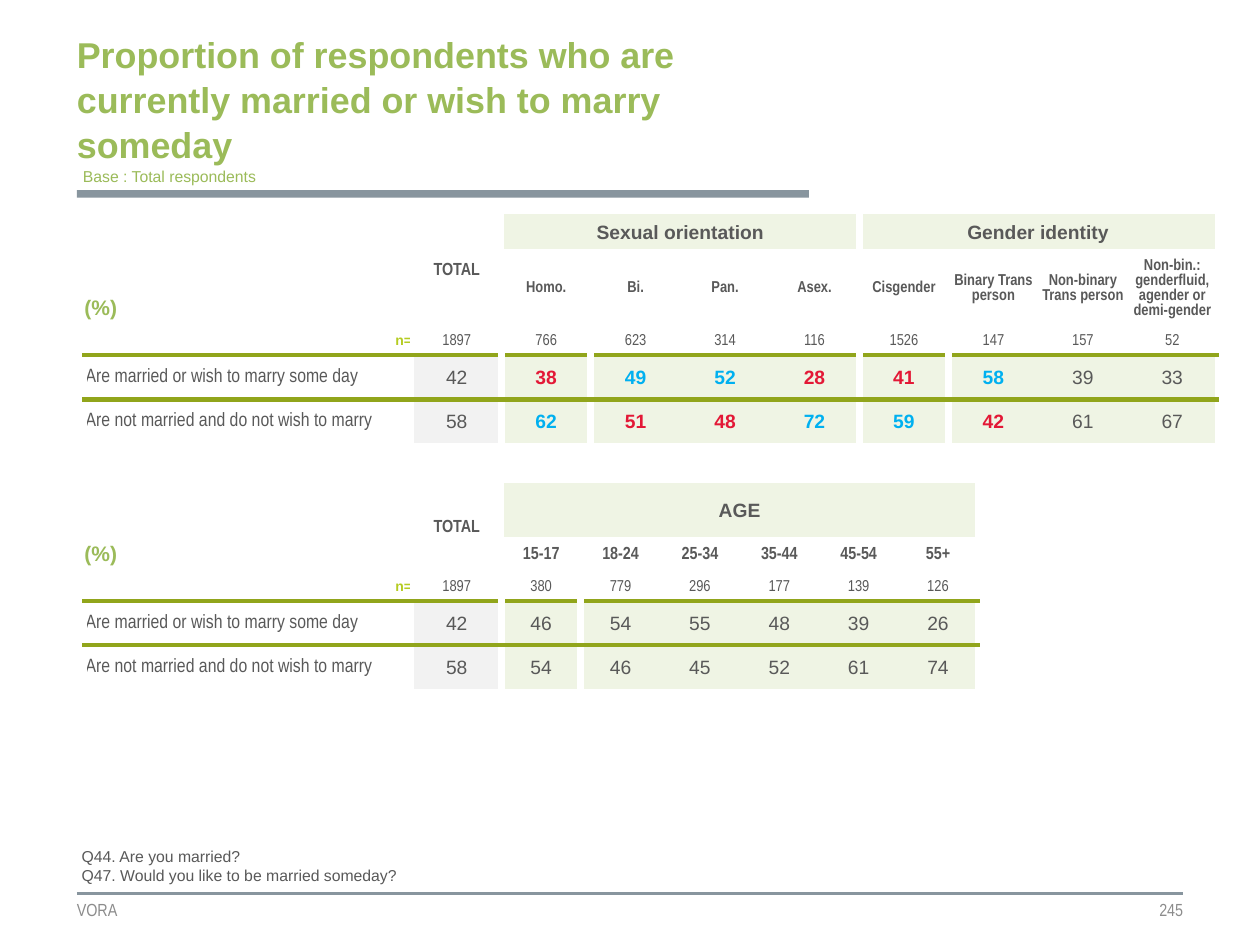
from lxml.etree import SubElement
from pptx import Presentation
from pptx.dml.color import RGBColor
from pptx.enum.shapes import MSO_CONNECTOR, MSO_SHAPE
from pptx.enum.text import MSO_ANCHOR as Anchor, MSO_AUTO_SIZE as AutoSize, PP_ALIGN as Align
from pptx.oxml.ns import qn
from pptx.util import Inches, Pt

GREEN, GREY, SLATE, FOOTER = "9BBB59", "595959", "88959E", "8C8C8C"
RULE, LIME, WHITE = "91A51B", "B5CC22", "FFFFFF"
PALE, LIGHT, RED, BLUE = "EFF4E4", "F2F2F2", "E31836", "00B0F0"
NARROW = "Arial Narrow"
NO_STYLE = "{2D5ABB26-0587-4C30-8999-92F81FD0307C}"
TIGHT, LOOSE = (0.01, 0.01, 0.01, 0), (0, 0.05, 0, 0.05)
ANSWERS = ["Are married or wish to marry some day", "Are not married and do not wish to marry"]


def rgb(value):
    return RGBColor.from_string(value)


class SlideBuilder:
    def __init__(self, slide):
        self.slide = slide

    def place(self, item, left, top, width, height):
        item.left, item.top = Inches(left), Inches(top)
        item.width, item.height = Inches(width), Inches(height)

    def margins(self, item, values):
        item.margin_left, item.margin_top, item.margin_right, item.margin_bottom = map(Inches, values)

    def set_text(self, frame, text, size, color=GREY, font="Arial", bold=False, align=Align.LEFT, spacing=None):
        frame.text = text
        for para in frame.paragraphs:
            para.alignment = align
            para.line_spacing = spacing
            for span in para.runs:
                span.font.size, span.font.name, span.font.bold = Pt(size), font, bold
                span.font.color.rgb = rgb(color)

    def title(self, text, *area):
        box = self.slide.shapes.title
        self.place(box, *area)
        frame = box.text_frame
        frame.auto_size, frame.word_wrap = AutoSize.NONE, True
        frame.vertical_anchor = Anchor.MIDDLE
        self.margins(frame, (0, 0, 0, 0.37))
        self.set_text(frame, text, 20.5, GREEN, bold=True, spacing=1.05)

    def text(self, text, area, size, color, wrap=True, inset=None, anchor=Anchor.TOP, **style):
        frame = self.slide.shapes.add_textbox(*map(Inches, area)).text_frame
        frame.word_wrap, frame.vertical_anchor = wrap, anchor
        if inset:
            self.margins(frame, inset)
        self.set_text(frame, text, size, color, **style)

    def bar(self, color, *area):
        bar = self.slide.shapes.add_shape(MSO_SHAPE.RECTANGLE, *map(Inches, area))
        bar.shadow.inherit = False
        bar.fill.solid()
        bar.fill.fore_color.rgb = rgb(color)
        bar.line.fill.background()

    def line(self, color, points, *ends):
        line = self.slide.shapes.add_connector(MSO_CONNECTOR.STRAIGHT, *map(Inches, ends))
        line.line.color.rgb, line.line.width = rgb(color), Pt(points)
        SubElement(line._element.spPr, qn("a:effectLst"))

    def cell(self, cell, text, size, fill=None, borders=None, inset=TIGHT, anchor=Anchor.MIDDLE,
             align=Align.CENTER, **style):
        self.margins(cell, inset)
        cell.vertical_anchor = anchor
        self.set_text(cell.text_frame, text, size, align=align, **style)
        properties = cell._tc.get_or_add_tcPr()
        for side in "LRTB":
            if borders and side in borders:
                color, points = borders[side]
                edge = SubElement(properties, qn("a:ln" + side), w=str(Pt(points)))
                SubElement(SubElement(edge, qn("a:solidFill")), qn("a:srgbClr"), val=color)
        if fill:
            cell.fill.solid()
            cell.fill.fore_color.rgb = rgb(fill)
        else:
            cell.fill.background()

    def table(self, left, top, widths, heights, groups, names, name_size, bases, answers):
        frame = self.slide.shapes.add_table(len(heights), len(widths), Inches(left), Inches(top),
                                            Inches(sum(widths)), Inches(sum(heights)))
        grid = frame.table
        grid.first_row = grid.horz_banding = False
        grid._tbl.tblPr.find(qn("a:tableStyleId")).text = NO_STYLE
        for column, width in zip(grid.columns, widths):
            column.width = Inches(width)
        for row, height in zip(grid.rows, heights):
            row.height = Inches(height)
        base_row = len(heights) - 1 - len(answers)
        name_row = base_row - 1
        sides = {"L": (WHITE, 3), "R": (WHITE, 3)}
        wide_left, wide_right = {"L": (WHITE, 4.5)}, {"R": (WHITE, 4.5)}
        under, over = {"B": (RULE, 3)}, {"T": (RULE, 3)}

        self.cell(grid.cell(0, 0), "", 8)
        blank = grid.cell(0, 0).text_frame.paragraphs[0]
        SubElement(blank._p, qn("a:endParaRPr"), sz="800")
        grid.cell(0, 1).merge(grid.cell(name_row, 1))
        self.cell(grid.cell(0, 1), "TOTAL", 10, font=NARROW, bold=True)
        if name_row > 1:
            grid.cell(1, 0).merge(grid.cell(name_row, 0))
        self.cell(grid.cell(1, 0), "(%)", 12, color=GREEN, bold=True, inset=LOOSE,
                  anchor=Anchor.BOTTOM, align=Align.LEFT, spacing=0.95)

        first, starts, ends = 2, set(), set()
        for label, count in groups:
            last = first + count - 1
            edges = dict(sides)
            if first > 2:
                edges |= wide_left
            if last < len(widths) - 1:
                edges |= wide_right
            grid.cell(0, first).merge(grid.cell(name_row - 1, last))
            self.cell(grid.cell(0, first), label, 11, PALE, edges, bold=True)
            starts.add(first)
            ends.add(last)
            first = last + 1

        for column, name in enumerate(names, 2):
            self.cell(grid.cell(name_row, column), name, name_size, font=NARROW, bold=True)
        self.cell(grid.cell(base_row, 0), "n=", 8, None, sides | under, LOOSE, align=Align.RIGHT,
                  color=LIME, bold=True, spacing=0.95)
        for column, base in enumerate(bases, 1):
            self.cell(grid.cell(base_row, column), base, 9, None, sides | under, font=NARROW)

        for row, (answer, values) in enumerate(zip(ANSWERS, answers), base_row + 1):
            rule = over if row == base_row + 1 else {}
            self.cell(grid.cell(row, 0), answer, 11, None, sides | rule, align=Align.LEFT, font=NARROW)
            for column, value in enumerate(values.split(), 1):
                edges = dict(rule)
                if column == 1:
                    edges |= sides | wide_right
                if column in starts:
                    edges |= wide_left
                if column in ends:
                    edges |= wide_right if column < len(widths) - 1 else {"R": (WHITE, 3)}
                color = {"+": BLUE, "-": RED}.get(value[-1], GREY)
                self.cell(grid.cell(row, column), value.rstrip("+-"), 11, LIGHT if column == 1 else PALE,
                          edges, color=color, bold=color != GREY)


def main():
    deck = Presentation()
    deck.slide_width, deck.slide_height = Inches(10), Inches(7.5)
    page = SlideBuilder(deck.slides.add_slide(deck.slide_layouts[5]))

    page.line(SLATE, 1.5, 0.61, 7.09, 9.39, 7.09)
    page.bar(SLATE, 0.61, 1.51, 5.81, 0.06)
    page.title("Proportion of respondents who are currently married or wish to marry someday",
               0.61, 0.62, 5.81, 0.69)
    page.text("Base : Total respondents", (0.56, 1.27, 1.6, 0.25), 9, GREEN, wrap=False)

    page.table(0.67, 1.7, [2.6] + [0.71] * 9, [0.28, 0.59, 0.21, 0.35, 0.35],
               [("Sexual orientation", 4), ("Gender identity", 4)],
               ["Homo.", "Bi.", "Pan.", "Asex.", "Cisgender", "Binary Trans person",
                "Non-binary Trans person", "Non-bin.: genderfluid, agender or demi-gender"], 9,
               "1897 766 623 314 116 1526 147 157 52".split(),
               ["42 38- 49+ 52+ 28- 41- 58+ 39 33", "58 62+ 51- 48- 72+ 59+ 42- 61 67"])
    page.table(0.67, 3.83, [2.6, 0.71] + [0.63] * 6, [0.24, 0.18, 0.28, 0.22, 0.35, 0.35],
               [("AGE", 6)], ["15-17", "18-24", "25-34", "35-44", "45-54", "55+"], 10,
               "1897 380 779 296 177 139 126".split(),
               ["42 46 54 55 48 39 26", "58 54 46 45 52 61 74"])

    page.text("Q44. Are you married?\vQ47. Would you like to be married someday?",
              (0.55, 6.67, 8.55, 0.4), 9, GREY)
    for text, left, width, align in [("VORA", 0.61, 2.8, Align.LEFT), ("245", 6.55, 2.84, Align.RIGHT)]:
        page.text(text, (left, 7.09, width, 0.26), 10, FOOTER, inset=(0, 0, 0, 0),
                  anchor=Anchor.MIDDLE, font=NARROW, align=align)
    deck.save("out.pptx")


if __name__ == "__main__":
    main()
